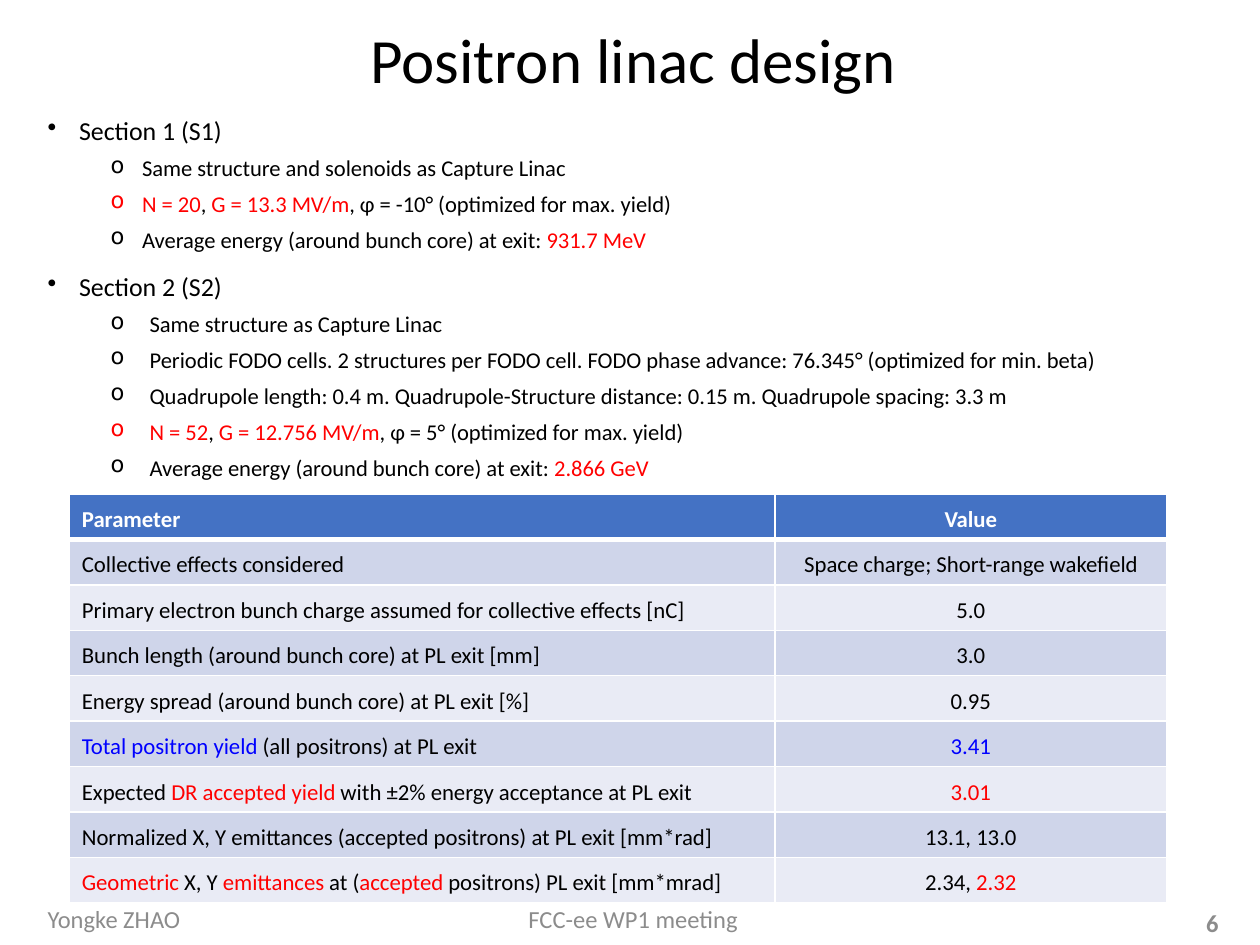
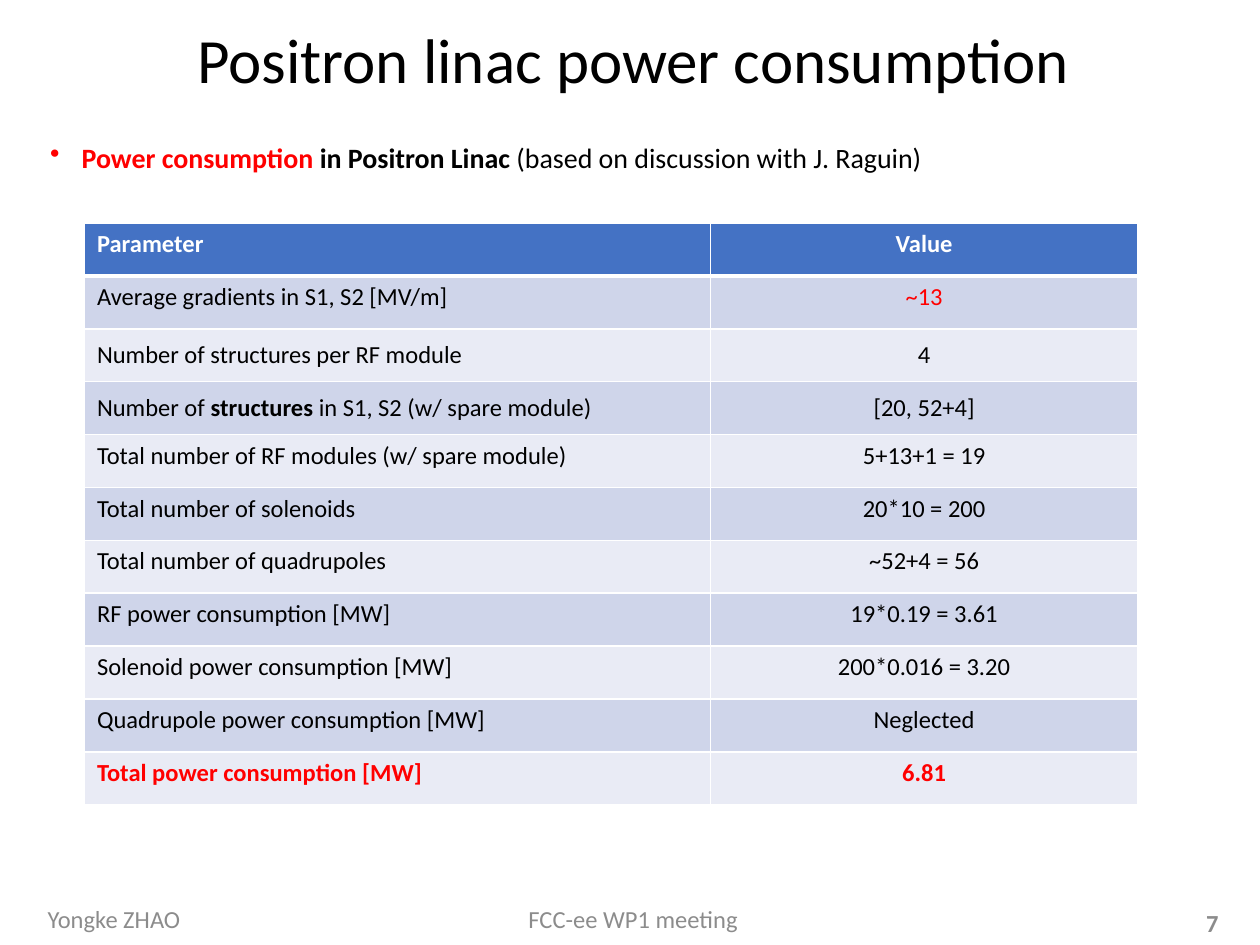
import pptx
import pptx.dml.color
import pptx.enum.text
import pptx.oxml
import pptx.oxml.ns
import pptx.util

Inches = pptx.util.Inches
Pt = pptx.util.Pt
ALIGN = pptx.enum.text.PP_ALIGN
ANCHOR = pptx.enum.text.MSO_ANCHOR

FONT = "Calibri"
BLACK, WHITE, GREY = "000000", "FFFFFF", "8C8C8C"
RED, BLUE = "FF0000", "0000FF"
HEADER_FILL = "4472C4"
BAND_FILLS = ("CFD5EA", "E9EBF5")

SECTION_1 = [
    ["Same structure and solenoids as Capture Linac"],
    [("N = 20", RED), ", ", ("G = 13.3 MV/m", RED), ", φ = -10° (optimized for max. yield)"],
    ["Average energy (around bunch core) at exit: ", ("931.7 MeV", RED)],
]
SECTION_2 = [
    ["Same structure as Capture Linac"],
    ["Periodic FODO cells. 2 structures per FODO cell. "
     "FODO phase advance: 76.345° (optimized for min. beta)"],
    ["Quadrupole length: 0.4 m. Quadrupole-Structure distance: 0.15 m. "
     "Quadrupole spacing: 3.3 m"],
    [("N = 52", RED), ",", (" G = 12.756 MV/m", RED), ", φ = 5° (optimized for max. yield)"],
    ["Average energy (around bunch core) at exit: ", ("2.866 GeV", RED)],
]
BEAM_ROWS = [
    (["Collective effects considered"], ["Space charge; Short-range wakefield"]),
    (["Primary electron bunch charge assumed for collective effects [nC]"], ["5.0"]),
    (["Bunch length (around bunch core) at PL exit [mm]"], ["3.0"]),
    (["Energy spread (around bunch core) at PL exit [%]"], ["0.95"]),
    ([("Total positron yield ", BLUE), "(all positrons) at PL exit"], [("3.41", BLUE)]),
    (["Expected ", ("DR accepted yield ", RED), "with ±2% energy acceptance at PL exit"],
     [("3.01", RED)]),
    (["Normalized X, Y emittances (accepted positrons) at PL exit [mm*rad]"], ["13.1, 13.0"]),
    ([("Geometric", RED), " X, Y ", ("emittances ", RED), "at (", ("accepted", RED),
      " positrons) PL exit [mm*mrad]"], ["2.34, ", ("2.32", RED)]),
]
POWER_ROWS = [
    (["Average gradients in S1, S2 [MV/m]"], [("~13", RED)]),
    (["Number of structures per RF module"], ["4"]),
    (["Number of ", ("structures", BLACK, True), " in S1, S2 (w/ spare module)"],
     ["[20, 52+4]"]),
    (["Total number of RF modules (w/ spare module)"], ["5+13+1 = 19"]),
    (["Total number of solenoids"], ["20*10 = 200"]),
    (["Total number of quadrupoles"], ["~52+4 = 56"]),
    (["RF power consumption [MW]"], ["19*0.19 = 3.61"]),
    (["Solenoid power consumption [MW]"], ["200*0.016 = 3.20"]),
    (["Quadrupole power consumption [MW]"], ["Neglected"]),
    ([("Total power consumption [MW]", RED, True)], [("6.81", RED, True)]),
]


def rgb(code):
    """Turn a hex string into a colour."""
    return pptx.dml.color.RGBColor.from_string(code)


def write(para, runs, size, align=ALIGN.LEFT, spacing=1.0):
    """Fill a paragraph with runs, each a string or (text, colour, bold)."""
    para.alignment = align
    para.line_spacing = spacing
    for run in runs:
        text, colour, bold = ((run,) if isinstance(run, str) else run) + (BLACK, False)[
            0 if isinstance(run, str) else len(run) - 1:]
        span = para.add_run()
        span.text = text
        span.font.name = FONT
        span.font.size = Pt(size)
        span.font.bold = bold
        span.font.color.rgb = rgb(colour)


def add_box(page, box, anchor=ANCHOR.TOP):
    """Add a wrapping text box and return its text frame."""
    frame = page.shapes.add_textbox(*map(Inches, box)).text_frame
    frame.word_wrap = True
    frame.vertical_anchor = anchor
    return frame


def add_line(page, box, run, size, align, spacing=1.0):
    """Add a single line of text centred vertically in its box."""
    frame = add_box(page, box, ANCHOR.MIDDLE)
    frame.margin_top = frame.margin_bottom = 0
    write(frame.paragraphs[0], [run], size, align, spacing)


def add_bullet(para, mark, left, hanging):
    """Give a paragraph a bullet with a hanging indent."""
    props = para._p.get_or_add_pPr()
    props.set("marL", str(Inches(left)))
    props.set("indent", str(-Inches(hanging)))
    bullet = pptx.oxml.parse_xml(f'<a:buChar {pptx.oxml.ns.nsdecls("a")} char="{mark}"/>')
    props.append(bullet)


def add_sections(page, box, sections):
    """Add headed bullet lists, each a heading, its items and their hanging indent."""
    frame = add_box(page, box)
    for number, (heading, items, hanging) in enumerate(sections):
        para = frame.add_paragraph() if number else frame.paragraphs[0]
        write(para, [heading], 14.8)
        para.space_before = Pt(10 if number else 0)
        add_bullet(para, "•", 0.25, 0.25)
        for item in items:
            para = frame.add_paragraph()
            para.level = 1
            write(para, item, 12.9)
            para.space_before = Pt(5)
            add_bullet(para, "o", 0.5 + hanging, hanging)


def add_borders(cell, top, bottom):
    """Draw white cell borders with the given top and bottom widths."""
    props = cell._tc.get_or_add_tcPr()
    widths = {"lnL": 1, "lnR": 1, "lnT": top, "lnB": bottom}
    for place, (tag, width) in enumerate(widths.items()):
        props.insert(place, pptx.oxml.parse_xml(
            f'<a:{tag} {pptx.oxml.ns.nsdecls("a")} w="{Pt(width)}"><a:solidFill>'
            f'<a:srgbClr val="{WHITE}"/></a:solidFill></a:{tag}>'))


def add_parameters(page, box, widths, row_height, rows, size, spacing, middle_rows):
    """Add a banded table of parameters and their values."""
    header = tuple([(name, WHITE, True)] for name in ("Parameter", "Value"))
    rows = [header] + rows
    table = page.shapes.add_table(len(rows), 2, *map(Inches, box)).table
    for column, width in zip(table.columns, widths):
        column.width = Inches(width)
    for number, row in enumerate(rows):
        table.rows[number].height = Inches(row_height)
        fill = BAND_FILLS[(number - 1) % 2] if number else HEADER_FILL
        for cell, runs, align in zip(table.rows[number].cells, row, (ALIGN.LEFT, ALIGN.CENTER)):
            cell.fill.solid()
            cell.fill.fore_color.rgb = rgb(fill)
            cell.vertical_anchor = ANCHOR.MIDDLE if number in middle_rows else ANCHOR.TOP
            add_borders(cell, 3 if number == 1 else 1, 1 if number else 3)
            write(cell.text_frame.paragraphs[0], runs, size, align, spacing)


def add_page(deck, title, number):
    """Add a blank slide with the shared title and footers."""
    page = deck.slides.add_slide(deck.slide_layouts[6])
    add_line(page, (0.29, 0.13, 9.47, 0.74), title, 36, ALIGN.CENTER, 0.9)
    add_line(page, (0.28, 7.17, 2.25, 0.24), ("Yongke ZHAO", GREY), 14, ALIGN.LEFT)
    add_line(page, (2.95, 7.17, 4.15, 0.24), ("FCC-ee WP1 meeting", GREY), 14, ALIGN.CENTER)
    add_line(page, (7.52, 7.2, 2.25, 0.24), (str(number), GREY, True), 14, ALIGN.RIGHT)
    return page


def add_design_page(deck):
    """Add the linac design slide."""
    page = add_page(deck, "Positron linac design", 6)
    add_sections(page, (0.28, 0.86, 9.47, 3.2), [
        ("Section 1 (S1)", SECTION_1, 0.25),
        ("Section 2 (S2)", SECTION_2, 0.31),
    ])
    add_parameters(page, (0.55, 3.92, 8.71, 3.08), (5.6, 3.11), 0.29, BEAM_ROWS,
                   13, 1.2, range(len(BEAM_ROWS) + 1))


def add_power_page(deck):
    """Add the power consumption slide."""
    page = add_page(deck, "Positron linac power consumption", 7)
    para = add_box(page, (0.3, 0.93, 9.47, 1.14)).paragraphs[0]
    write(para, [("Power consumption", RED, True), (" in Positron Linac", BLACK, True),
                 " (based on discussion with J. Raguin)"], 16, spacing=1.5)
    add_bullet(para, "•", 0.25, 0.25)
    add_parameters(page, (0.67, 1.77, 8.36, 4.63), (4.97, 3.39), 0.42, POWER_ROWS,
                   14, 1.0, (2, 3))


def main():
    """Build the deck and save it."""
    deck = pptx.Presentation()
    deck.slide_width, deck.slide_height = Inches(10), Inches(7.5)
    add_design_page(deck)
    add_power_page(deck)
    deck.save("out.pptx")


if __name__ == "__main__":
    main()
